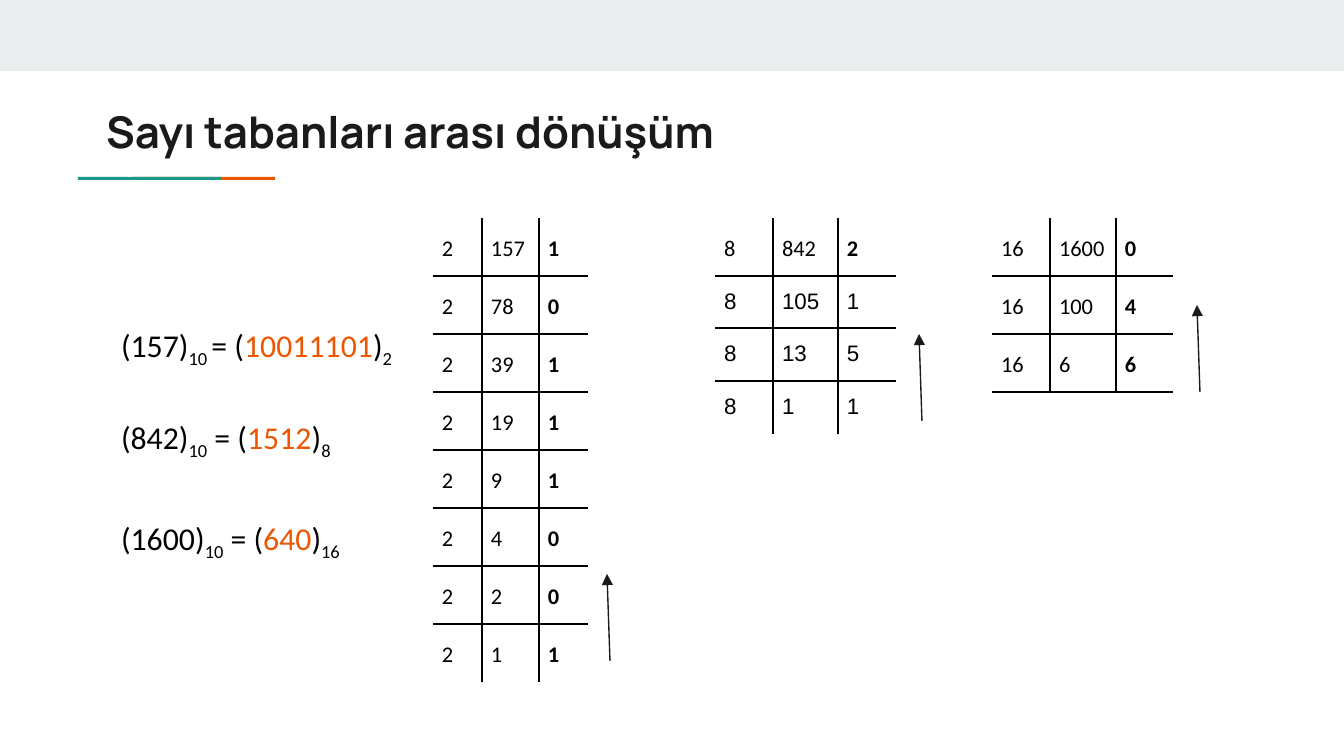
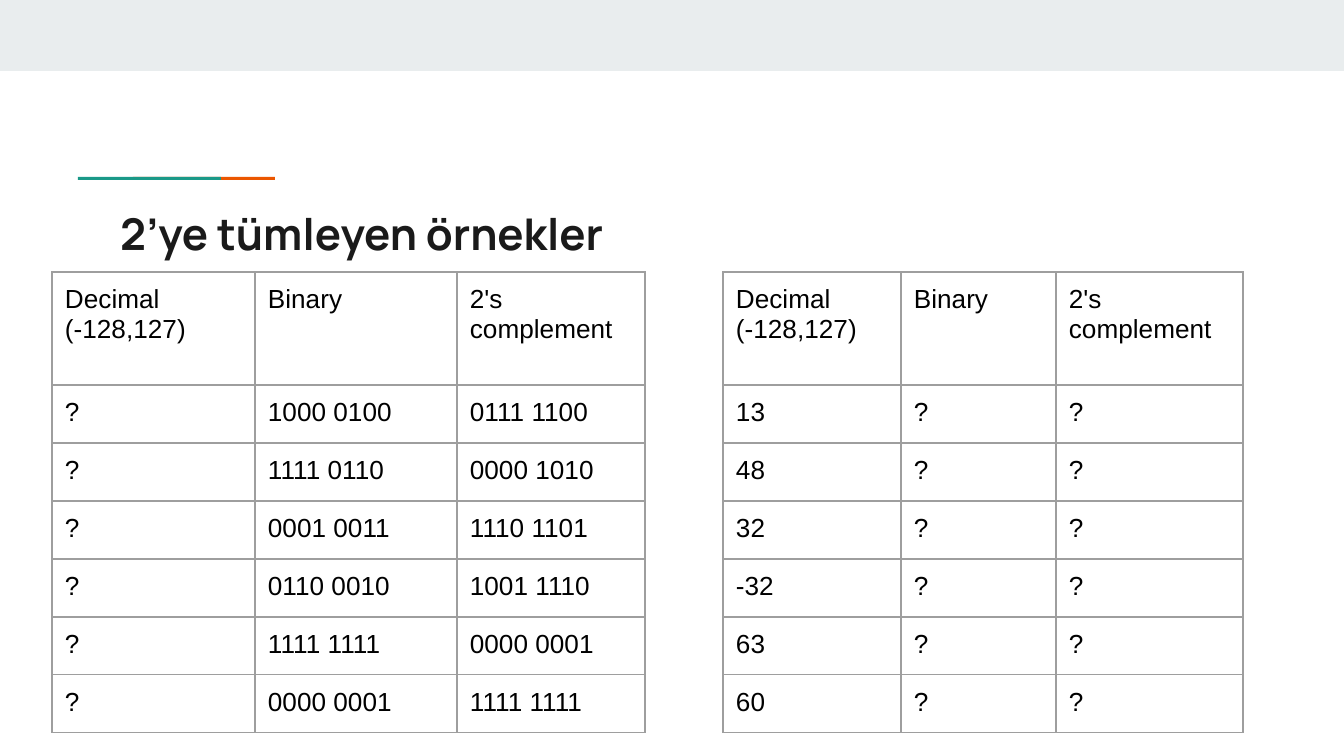
"""Build two slides on number base conversion and two's complement exercises."""
from lxml.etree import SubElement
from pptx import Presentation
from pptx.dml.color import RGBColor
from pptx.enum.shapes import MSO_CONNECTOR, MSO_SHAPE
from pptx.enum.text import MSO_ANCHOR, MSO_AUTO_SIZE, PP_ALIGN
from pptx.oxml.ns import qn
from pptx.util import Emu, Pt

RECTANGLE = MSO_SHAPE.RECTANGLE
STRAIGHT = MSO_CONNECTOR.STRAIGHT
TOP, MIDDLE = MSO_ANCHOR.TOP, MSO_ANCHOR.MIDDLE
NO_FIT = MSO_AUTO_SIZE.NONE
LEFT = PP_ALIGN.LEFT

COLORS = {"band": "E9EDEE", "orange": "EB5600", "green": "1A9988",
          "ink": "1A1A1A", "black": "000000", "grid": "9E9E9E"}
RGB = {name: RGBColor.from_string(value) for name, value in COLORS.items()}
PX = 914400 / 134.4
INSET = 13
PLAIN_STYLE = "{2D5ABB26-0587-4C30-8999-92F81FD0307C}"


def place_text(box, left, top, width, height, anchor):
    """Move a text placeholder and give it even margins."""
    box.left, box.top, box.width, box.height = (
        Emu(round(v * PX)) for v in (left, top, width, height))
    frame = box.text_frame
    frame.auto_size, frame.word_wrap = NO_FIT, True
    frame.vertical_anchor = anchor
    frame.margin_left = frame.margin_right = Emu(round(INSET * PX))
    frame.margin_top = frame.margin_bottom = Emu(round(INSET * PX))
    return frame


def draw_table(page, left, top, widths, heights, rows, size, side_inset, color, weight, outer):
    """Add a table with inner borders and the outer borders named in outer."""
    left, top, width, height = (
        Emu(round(v * PX)) for v in (left, top, sum(widths), sum(heights)))
    holder = page.shapes.add_table(len(rows), len(widths), left, top, width, height)
    holder.element.xpath(".//a:tableStyleId")[0].text = PLAIN_STYLE
    table = holder.table
    table.first_row = table.horz_banding = False
    for column, width in zip(table.columns, widths):
        column.width = Emu(round(width * PX))
    for row, height in zip(table.rows, heights):
        row.height = Emu(round(height * PX))
    for y, values in enumerate(rows):
        for x, value in enumerate(values):
            cell = table.cell(y, x)
            cell.text = value
            cell.margin_left = cell.margin_right = Emu(round(side_inset * PX))
            cell.margin_top = cell.margin_bottom = Emu(round(INSET * PX))
            for para in cell.text_frame.paragraphs:
                para.font.size, para.font.name = Pt(size), "Arial"
                para.font.color.rgb = RGB["black"]
            at_edge = {"L": x == 0, "R": x == len(widths) - 1,
                       "T": y == 0, "B": y == len(rows) - 1}
            properties = cell._tc.get_or_add_tcPr()
            for side, is_outer in at_edge.items():
                if not is_outer or side in outer:
                    border = SubElement(properties, qn("a:ln" + side), w=str(Pt(weight)))
                    fill = SubElement(border, qn("a:solidFill"))
                    SubElement(fill, qn("a:srgbClr"), val=COLORS[color])
            cell.fill.background()
    return table


deck = Presentation()
deck.slide_width, deck.slide_height = Emu(round(1344 * PX)), Emu(round(756 * PX))
conversion_page = deck.slides.add_slide(deck.slide_layouts[1])
complement_page = deck.slides.add_slide(deck.slide_layouts[5])

BANDS = [("band", 0, 0, 1344, 71), ("orange", 133, 177, 142, 3), ("green", 78, 177, 143, 3)]
for number, (color, *frame) in enumerate(BANDS):
    band = conversion_page.shapes.add_shape(RECTANGLE, *(Emu(round(v * PX)) for v in frame))
    band.shadow.inherit = False
    band.fill.solid()
    band.fill.fore_color.rgb = RGB[color]
    band.line.fill.background()
    band.element.nvSpPr.cNvPr.id = 20 + number
    deck.slide_master.shapes.element.append(band.element)

TITLES = [(conversion_page, 93, 92, "Sayı tabanları arası dönüşüm"),
          (complement_page, 107, 194, "2’ye tümleyen örnekler")]
for page, left, top, text in TITLES:
    frame = place_text(page.shapes.title, left, top, 1130, 79, MIDDLE)
    frame.text = text
    para = frame.paragraphs[0]
    para.alignment = LEFT
    para.font.size, para.font.name, para.font.bold = Pt(23.4), "Manrope", True
    para.font.color.rgb = RGB["ink"]

EQUATIONS = [("157", "10 ", "= (", "10011101", "2", 0),
             ("842", "10", " = (", "1512", "8", 23),
             ("1600", "10", " = (", "640", "16", 27)]
frame = place_text(conversion_page.placeholders[1], 108, 306, 1130, 332, TOP)
for number, (decimal, base, equals, result, new_base, gap) in enumerate(EQUATIONS):
    para = frame.add_paragraph() if number else frame.paragraphs[0]
    para.line_spacing, para.space_before, para.space_after = 1.15, Pt(gap), Pt(0)
    properties = para._p.get_or_add_pPr()
    properties.set("marL", "0")
    properties.set("indent", "0")
    SubElement(properties, qn("a:buNone"))
    para.font.size, para.font.name = Pt(17), "Calibri"
    for text, color, lowered in [(f"({decimal})", "black", False), (base, "black", True),
                                 (equals, "black", False), (result, "orange", False),
                                 (")", "black", False), (new_base, "black", True)]:
        span = para.add_run()
        span.text = text
        span.font.color.rgb = RGB[color]
        if lowered:
            span._r.get_or_add_rPr().set("baseline", "-25000")

DIVISIONS = [
    ("2", ["157", "78", "39", "19", "9", "4", "2", "1"], "10111001",
     433, [49, 57, 49], [58] * 8, 8, "", (610, 661)),
    ("8", ["842", "105", "13", "1"], "2151",
     715, [58, 65, 58], [58, 52, 53, 53], 1, "", (922, 421)),
    ("16", ["1600", "100", "6"], "046",
     992, [58, 66, 57], [58] * 3, 3, "B", (1200, 392)),
]
for base, quotients, remainders, left, widths, heights, calibri_rows, outer, start in DIVISIONS:
    rows = [(base, *pair) for pair in zip(quotients, remainders)]
    table = draw_table(conversion_page, left, 218, widths, heights, rows,
                       12, 9, "black", 1.13, outer)
    for y in range(calibri_rows):
        for x in range(3):
            para = table.cell(y, x).text_frame.paragraphs[0]
            para.line_spacing = 1.15
            para.font.name, para.font.bold = "Calibri", x == 2
    x, y = start
    arrow = conversion_page.shapes.add_connector(
        STRAIGHT, *(Emu(round(v * PX)) for v in (x, y, x - 3, y - 87)))
    arrow.line.color.rgb = RGB["ink"]
    arrow.line.width = Pt(0.75)
    SubElement(arrow.element.spPr.find(qn("a:ln")), qn("a:tailEnd"), type="triangle")
    SubElement(arrow.element.spPr, qn("a:effectLst"))

HEADER = ("Decimal\n(-128,127)", "Binary", "2's complement")
BINARIES = [("1000 0100", "0111 1100"), ("1111 0110", "0000 1010"), ("0001 0011", "1110 1101"),
            ("0110 0010", "1001 1110"), ("1111 1111", "0000 0001"), ("0000 0001", "1111 1111")]
DECIMALS = ["13", "48", "32", "-32", "63", "60"]
EXERCISES = [(52, [203, 202, 188], [("?", *pair) for pair in BINARIES]),
             (723, [178, 155, 187], [(decimal, "?", "?") for decimal in DECIMALS])]
for left, widths, rows in EXERCISES:
    draw_table(complement_page, left, 272, widths, [113] + [58] * 6, [HEADER] + rows,
               14, INSET, "grid", 0.75, "LRTB")

deck.save("out.pptx")
